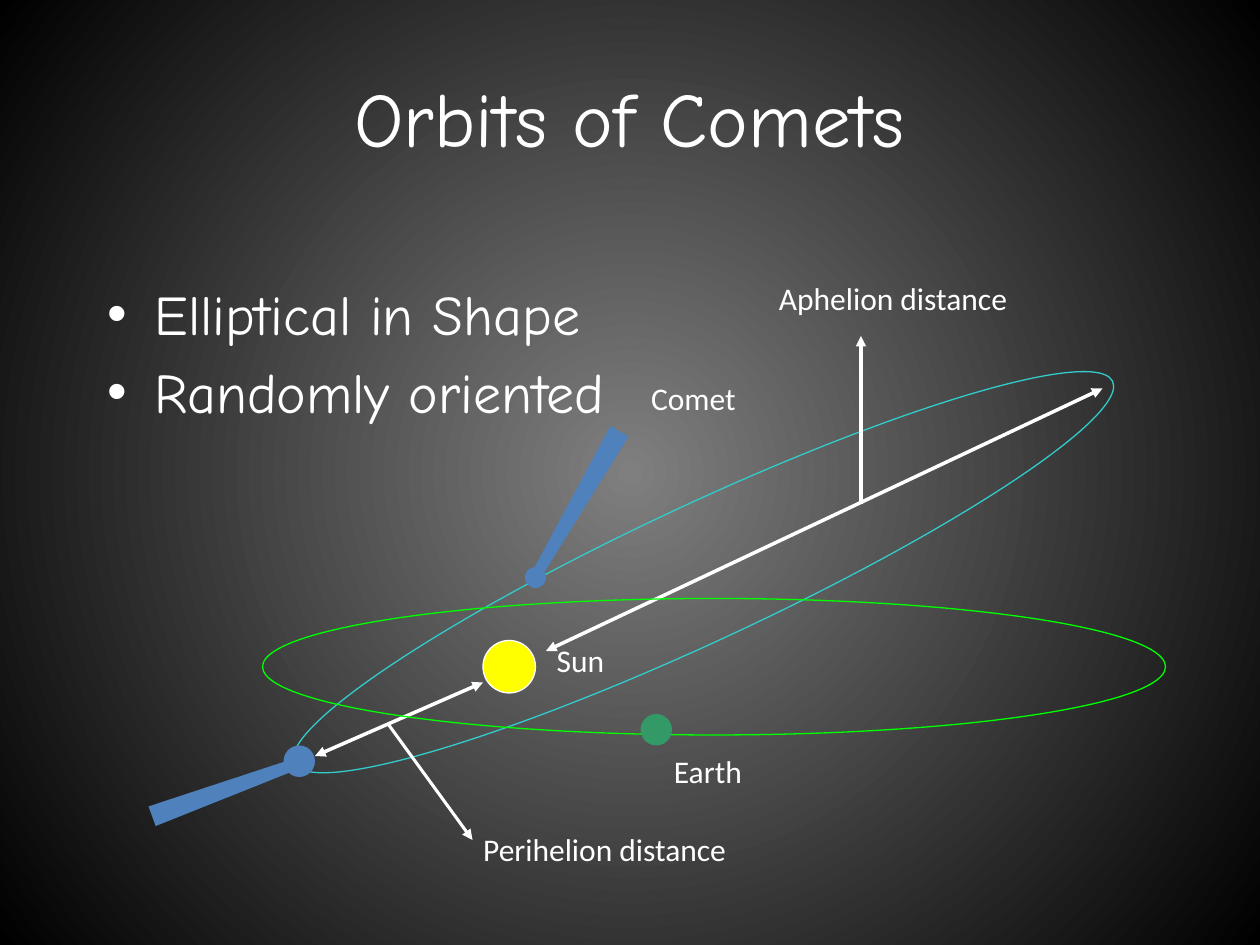
from pptx import Presentation
from pptx.dml.color import RGBColor
from pptx.enum.shapes import MSO_CONNECTOR, MSO_SHAPE
from pptx.enum.text import PP_ALIGN
from pptx.oxml.ns import qn
from pptx.util import Pt
from lxml import etree

OVAL = MSO_SHAPE.OVAL
STRAIGHT = MSO_CONNECTOR.STRAIGHT
CENTER = PP_ALIGN.CENTER

WHITE = "FFFFFF"
COMET_BLUE = "4F81BD"
HEADING_FONT = "Comic Neue"
LABEL_FONT = "Calibri"
TAIL_LENGTH = 96
TAIL_WIDTH = 12
TAIL_TIP = 6


def rgb(color):
    return RGBColor.from_string(color)


def paint_background(slide, inner, outer):
    fill = slide.background.fill
    fill.gradient()
    for stop, color in zip(fill.gradient_stops, (inner, outer)):
        stop.color.rgb = rgb(color)
    gradient = slide.element.find(".//" + qn("a:gradFill"))
    gradient.remove(gradient.find(qn("a:lin")))
    circle = etree.SubElement(gradient, qn("a:path"), {"path": "circle"})
    sides = {side: "50000" for side in "ltrb"}
    etree.SubElement(circle, qn("a:fillToRect"), sides)


def write(paragraph, text, font, size):
    run = paragraph.add_run()
    run.text = text
    run.font.name = font
    run.font.size = Pt(size)
    run.font.color.rgb = rgb(WHITE)


def place(placeholder, left, top, width, height):
    placeholder.left, placeholder.top = Pt(left), Pt(top)
    placeholder.width, placeholder.height = Pt(width), Pt(height)


def fill_title(title, text):
    place(title, 36, 21.6, 648, 90)
    heading = title.text_frame.paragraphs[0]
    heading.alignment = CENTER
    write(heading, text, HEADING_FONT, 44)


def fill_bullets(body, points):
    place(body, 54, 156, 300, 324)
    frame = body.text_frame
    for index, point in enumerate(points):
        paragraph = frame.add_paragraph() if index else frame.paragraphs[0]
        write(paragraph, point, HEADING_FONT, 32)


def style(shape, fill, line):
    shape.shadow.inherit = False
    if fill:
        shape.fill.solid()
        shape.fill.fore_color.rgb = rgb(fill)
    else:
        shape.fill.background()
    if line:
        shape.line.color.rgb = rgb(line)
        shape.line.width = Pt(0.75)
    else:
        shape.line.fill.background()


def add_ellipse(slide, left, top, width, height, fill=None, line=None, rotation=0):
    ellipse = slide.shapes.add_shape(OVAL, Pt(left), Pt(top), Pt(width), Pt(height))
    ellipse.rotation = rotation
    style(ellipse, fill, line)


def add_disc(slide, left, top, diameter, fill, line=None):
    add_ellipse(slide, left, top, diameter, diameter, fill, line)


def add_comet_tail(slide, left, top, rotation):
    inset = (TAIL_WIDTH - TAIL_TIP) / 2
    outline = slide.shapes.build_freeform(Pt(left), Pt(top))
    outline.add_line_segments([
        (Pt(left + inset), Pt(top + TAIL_LENGTH)),
        (Pt(left + TAIL_WIDTH - inset), Pt(top + TAIL_LENGTH)),
        (Pt(left + TAIL_WIDTH), Pt(top)),
    ], close=True)
    tail = outline.convert_to_shape()
    tail.rotation = rotation
    style(tail, COMET_BLUE, None)


def add_arrow(slide, start, end, weight, ends):
    arrow = slide.shapes.add_connector(STRAIGHT, *map(Pt, start + end))
    arrow.line.color.rgb = rgb(WHITE)
    arrow.line.width = Pt(weight)
    outline = arrow.line._get_or_add_ln()
    for name in ends:
        etree.SubElement(outline, qn(name), type="triangle")
    etree.SubElement(arrow.element.spPr, qn("a:effectLst"))


def add_distance(slide, start, end):
    add_arrow(slide, start, end, 2, ("a:headEnd", "a:tailEnd"))


def add_pointer(slide, start, end):
    add_arrow(slide, start, end, 1.75, ("a:tailEnd",))


def add_label(slide, text, left, top, width):
    label = slide.shapes.add_textbox(Pt(left), Pt(top), Pt(width), Pt(36))
    label.text_frame.word_wrap = True
    write(label.text_frame.paragraphs[0], text, LABEL_FONT, 18)


def main():
    deck = Presentation()
    deck.slide_width, deck.slide_height = Pt(720), Pt(540)
    slide = deck.slides.add_slide(deck.slide_layouts[1])
    paint_background(slide, "7F7F7F", "000000")
    fill_title(slide.shapes.title, "Orbits of Comets")
    fill_bullets(slide.placeholders[1], ["Elliptical in Shape", "Randomly oriented"])

    add_ellipse(slide, 144, 288, 516, 78, line="33CCCC", rotation=335)
    add_disc(slide, 276, 366, 30, "FFFF00", WHITE)
    add_comet_tail(slide, 324, 240, 30)
    add_disc(slide, 162, 426, 18, COMET_BLUE)
    add_disc(slide, 300, 324, 12, COMET_BLUE)
    add_comet_tail(slide, 126, 402, 250)
    add_label(slide, "Sun", 311, 363, 58)
    add_distance(slide, (180, 432), (276, 390))
    add_distance(slide, (312, 372), (630, 222))
    add_label(slide, "Comet", 365, 213, 85)

    add_ellipse(slide, 150, 342, 516, 78, line="00FF00")
    add_disc(slide, 366, 408, 18, "339966")
    add_label(slide, "Earth", 378, 426, 72)

    add_pointer(slide, (222, 414), (270, 480))
    add_label(slide, "Perihelion distance", 269, 471, 217)
    add_label(slide, "Aphelion distance", 438, 156, 204)
    add_pointer(slide, (492, 288), (492, 192))

    deck.save("out.pptx")


if __name__ == "__main__":
    main()
